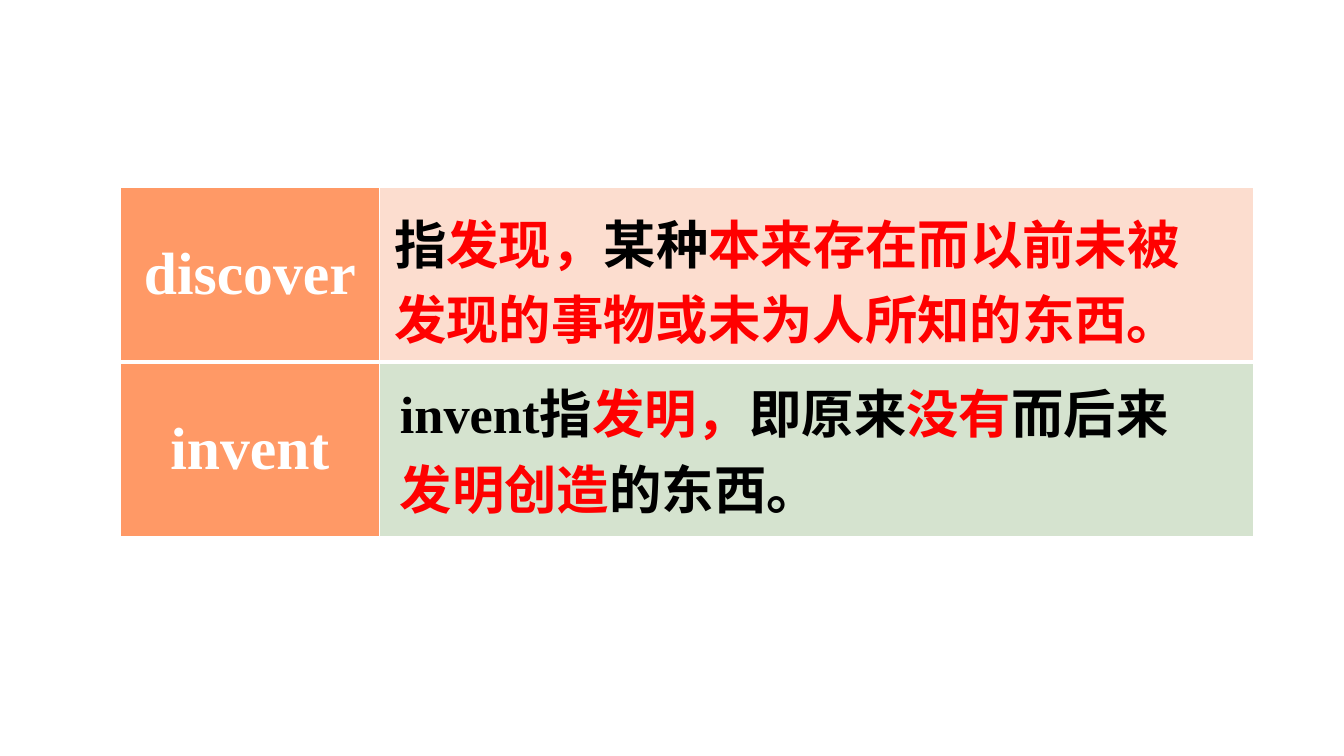
from lxml.etree import SubElement
from pptx import Presentation
from pptx.dml.color import RGBColor
from pptx.enum.text import MSO_ANCHOR, MSO_AUTO_SIZE, PP_ALIGN
from pptx.oxml.ns import qn
from pptx.util import Pt

COLORS = {
    "white": "FFFFFF",
    "black": "000000",
    "red": "FF0000",
    "orange": "FF9966",
    "peach": "FCDDCF",
    "sage": "D5E3CF",
}
FONT = "Times New Roman"
WORDS = [("discover", "peach"), ("invent", "sage")]
DISCOVER_MEANING = [
    ("指", "black"),
    ("发现，", "red"),
    ("某种", "black"),
    ("本来存在而以前未被发现的事物或未为人所知的东西。", "red"),
]
INVENT_MEANING = [
    ("invent指", "black"),
    ("发明，", "red"),
    ("即原来", "black"),
    ("没有", "red"),
    ("而后来", "black"),
    ("发明创造", "red"),
    ("的东西。", "black"),
]


def color(name):
    return RGBColor.from_string(COLORS[name])


def set_bold_font(para, size):
    para.font.name = FONT
    para.font.size = Pt(size)
    para.font.bold = True


def add_border(cell, side, width):
    line = SubElement(cell._tc.get_or_add_tcPr(), qn(f"a:ln{side}"), w=str(Pt(width)))
    fill = SubElement(line, qn("a:solidFill"))
    SubElement(fill, qn("a:srgbClr"), val=COLORS["white"])


def style_cell(cell, fill_name, top, bottom):
    """Border widths come first: the schema wants them ahead of the fill."""
    for side, width in (("L", 1), ("R", 1), ("T", top), ("B", bottom)):
        add_border(cell, side, width)
    cell.fill.solid()
    cell.fill.fore_color.rgb = color(fill_name)


def write_word(cell, word):
    cell.vertical_anchor = MSO_ANCHOR.MIDDLE
    cell.margin_left = cell.margin_right = Pt(9.6)
    cell.margin_top = cell.margin_bottom = Pt(4.8)
    para = cell.text_frame.paragraphs[0]
    para.alignment = PP_ALIGN.CENTER
    set_bold_font(para, 42.6)
    para.font.color.rgb = color("white")
    para.add_run().text = word


def add_word_table(page):
    frame = page.shapes.add_table(2, 2, Pt(85.7), Pt(134), Pt(810), Pt(249.4))
    table = frame.table
    for column, width in zip(table.columns, (185.6, 624.4)):
        column.width = Pt(width)
    for index, (word, meaning_fill) in enumerate(WORDS):
        table.rows[index].height = Pt(124.7)
        top, bottom = ((1, 3), (3, 1))[index]
        word_cell, meaning_cell = table.rows[index].cells
        style_cell(word_cell, "orange", top, bottom)
        style_cell(meaning_cell, meaning_fill, top, bottom)
        write_word(word_cell, word)


def add_meaning(page, left, top, spans):
    box = page.shapes.add_textbox(Pt(left), Pt(top), Pt(592.6), Pt(116))
    box.text_frame.word_wrap = True
    box.text_frame.auto_size = MSO_AUTO_SIZE.SHAPE_TO_FIT_TEXT
    para = box.text_frame.paragraphs[0]
    para.line_spacing = 1.2
    set_bold_font(para, 37.4)
    for text, color_name in spans:
        span = para.add_run()
        span.text = text
        span.font.color.rgb = color(color_name)


def main():
    deck = Presentation()
    deck.slide_width, deck.slide_height = Pt(960), Pt(540)
    page = deck.slides.add_slide(deck.slide_layouts[6])
    add_word_table(page)
    add_meaning(page, 278.6, 260, INVENT_MEANING)
    add_meaning(page, 274.4, 139, DISCOVER_MEANING)
    deck.save("out.pptx")


if __name__ == "__main__":
    main()
